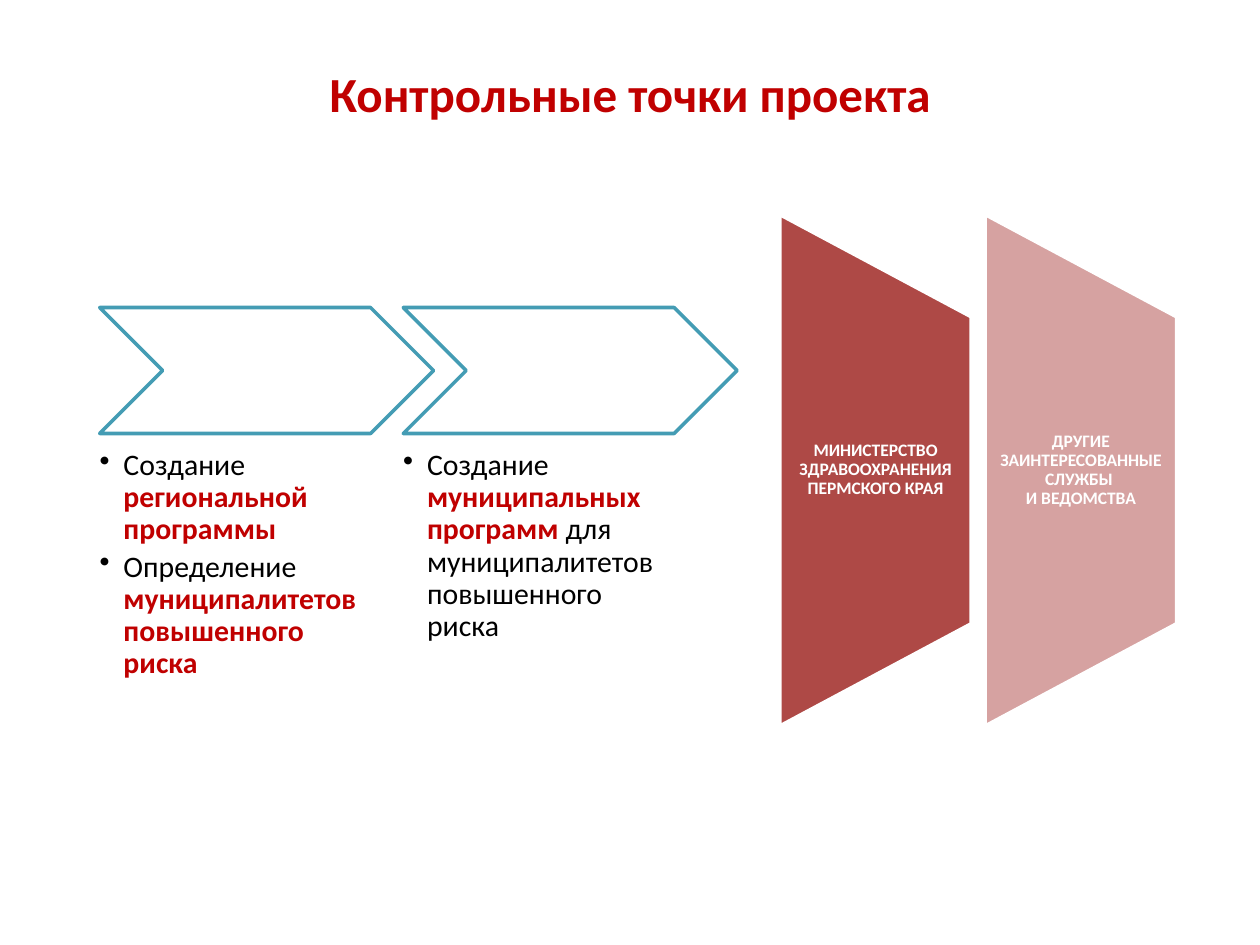
import dataclasses

import pptx
import pptx.dml.color
import pptx.enum.shapes
import pptx.enum.text
import pptx.oxml.ns
import pptx.shapes.autoshape
import pptx.slide
import pptx.text.text
import pptx.util
from lxml import etree

Cm = pptx.util.Cm
Pt = pptx.util.Pt
RGBColor = pptx.dml.color.RGBColor
Shape = pptx.enum.shapes.MSO_SHAPE
Align = pptx.enum.text.PP_ALIGN
Anchor = pptx.enum.text.MSO_ANCHOR
Frame = pptx.text.text.TextFrame
Item = pptx.text.text._Paragraph
Run = pptx.text.text._Run
Slide = pptx.slide.Slide

RED = RGBColor(0xC0, 0x00, 0x00)
BRICK = RGBColor(0xAE, 0x49, 0x46)
PINK = RGBColor(0xD6, 0xA2, 0xA1)
TEAL = RGBColor(0x44, 0x9C, 0xB4)
WHITE = RGBColor(0xFF, 0xFF, 0xFF)
BLACK = RGBColor(0x00, 0x00, 0x00)

FONT = "Calibri"
INDENT = Cm(0.48)
STAGE_LEFT, STAGE_STEP = 2.01, 6.12
PANEL_LEFT, PANEL_STEP = 15.72, 4.14
PANEL_WIDTH, PANEL_HEIGHT, PANEL_MID = 3.86, 10.31, 9.48
LABEL_HEIGHT = 6.2


@dataclasses.dataclass
class Part:
    text: str
    key: bool = False


@dataclasses.dataclass
class Stage:
    points: list[list[Part]]


@dataclasses.dataclass
class Panel:
    text: str
    fill: RGBColor


STAGES = [
    Stage([
        [Part("Создание "), Part("региональной программы", True)],
        [Part("Определение "), Part("муниципалитетов повышенного риска", True)],
    ]),
    Stage([
        [Part("Создание "), Part("муниципальных программ ", True),
         Part("для муниципалитетов повышенного риска")],
    ]),
]

PANELS = [
    Panel("МИНИСТЕРСТВО ЗДРАВООХРАНЕНИЯ ПЕРМСКОГО КРАЯ", BRICK),
    Panel("ДРУГИЕ ЗАИНТЕРЕСОВАННЫЕ СЛУЖБЫ \nИ ВЕДОМСТВА", PINK),
]


def style_run(run: Run, size: float, color: RGBColor, bold: bool) -> None:
    run.font.name = FONT
    run.font.size = Pt(size)
    run.font.bold = bold
    run.font.color.rgb = color


def set_label(item: Item, text: str, size: float, color: RGBColor) -> None:
    """Fill a paragraph with centred bold text."""
    item.text = text
    item.alignment = Align.CENTER
    for run in item.runs:
        style_run(run, size, color, True)


def add_frame(slide: Slide, left: float, top: float, width: float,
              height: float, side: float = 0) -> Frame:
    """Add a wrapping text box with only side margins."""
    box = slide.shapes.add_textbox(Cm(left), Cm(top), Cm(width), Cm(height))
    frame = box.text_frame
    frame.word_wrap = True
    frame.margin_left = frame.margin_right = Cm(side)
    frame.margin_top = frame.margin_bottom = 0
    return frame


def add_form(slide: Slide, kind: Shape, left: float, top: float, width: float,
             height: float, fill: RGBColor, line: RGBColor) -> pptx.shapes.autoshape.Shape:
    form = slide.shapes.add_shape(kind, Cm(left), Cm(top), Cm(width), Cm(height))
    form.shadow.inherit = False
    form.fill.solid()
    form.fill.fore_color.rgb = fill
    form.line.color.rgb = line
    form.line.width = Pt(2)
    return form


def add_bullet(item: Item) -> None:
    props = item._p.get_or_add_pPr()
    props.set("marL", str(INDENT))
    props.set("indent", str(-INDENT))
    mark = etree.SubElement(props, pptx.oxml.ns.qn("a:buChar"))
    mark.set("char", "•")


def draw_title(slide: Slide) -> None:
    frame = add_frame(slide, 1.27, 0.76, 22.86, 2.21, 0.25)
    frame.vertical_anchor = Anchor.MIDDLE
    set_label(frame.paragraphs[0], "Контрольные точки проекта", 28, RED)


def draw_panel(slide: Slide, panel: Panel, left: float) -> None:
    # The shape lies on its side, so its frame is centred on the upright panel.
    form = add_form(slide, Shape.FLOWCHART_MANUAL_OPERATION,
                    left + (PANEL_WIDTH - PANEL_HEIGHT) / 2, PANEL_MID - PANEL_WIDTH / 2,
                    PANEL_HEIGHT, PANEL_WIDTH, panel.fill, WHITE)
    form.rotation = 270
    frame = add_frame(slide, left, PANEL_MID - LABEL_HEIGHT / 2,
                      PANEL_WIDTH, LABEL_HEIGHT, 0.18)
    frame.vertical_anchor = Anchor.MIDDLE
    label = frame.paragraphs[0]
    set_label(label, panel.text, 10, WHITE)
    label.line_spacing = 0.9


def draw_stage(slide: Slide, stage: Stage, left: float) -> None:
    add_form(slide, Shape.CHEVRON, left, 6.2, 6.73, 2.54, WHITE, TEAL)
    frame = add_frame(slide, left, 9.07, 5.38, 4.78)
    for rank, point in enumerate(stage.points):
        item = frame.add_paragraph() if rank else frame.paragraphs[0]
        item.line_spacing = 0.9
        item.space_after = Pt(3)
        add_bullet(item)
        for part in point:
            run = item.add_run()
            run.text = part.text
            style_run(run, 17, RED if part.key else BLACK, part.key)


def main() -> None:
    deck = pptx.Presentation()
    deck.slide_width, deck.slide_height = Cm(25.4), Cm(19.05)
    slide = deck.slides.add_slide(deck.slide_layouts[6])
    draw_title(slide)
    for rank, panel in enumerate(PANELS):
        draw_panel(slide, panel, PANEL_LEFT + rank * PANEL_STEP)
    for rank, stage in enumerate(STAGES):
        draw_stage(slide, stage, STAGE_LEFT + rank * STAGE_STEP)
    deck.save("out.pptx")


if __name__ == "__main__":
    main()
